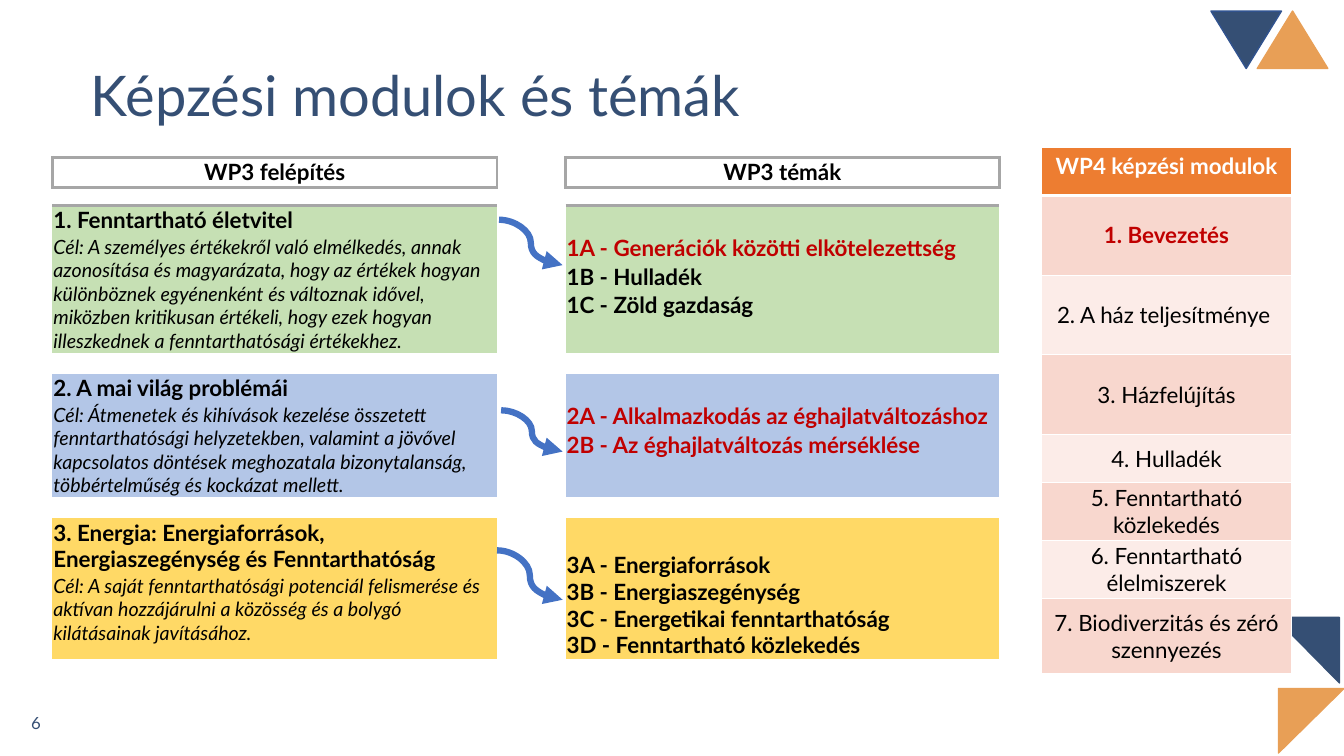
from lxml.etree import SubElement
from pptx import Presentation
from pptx.dml.color import RGBColor
from pptx.enum.shapes import MSO_CONNECTOR, MSO_SHAPE
from pptx.enum.text import MSO_ANCHOR, PP_ALIGN
from pptx.oxml import parse_xml
from pptx.oxml.ns import nsdecls, qn
from pptx.util import Inches, Pt

NAVY, ORANGE, RED, BLACK, WHITE = "354F74", "E89F56", "C00000", "000000", "FFFFFF"
GREEN, BLUE, GOLD, GRAY = "C6E0B4", "B3C6E7", "FFD966", "A6A6A6"
NO_STYLE = "{2D5ABB26-0587-4C30-8999-92F81FD0307C}"
GOALS = [
    "Cél: A személyes értékekről való elmélkedés, annak azonosítása és magyarázata, "
    "hogy az értékek hogyan különböznek egyénenként és változnak idővel, miközben "
    "kritikusan értékeli, hogy ezek hogyan illeszkednek a fenntarthatósági értékekhez.",
    "Cél: Átmenetek és kihívások kezelése összetett fenntarthatósági helyzetekben, "
    "valamint a jövővel kapcsolatos döntések meghozatala bizonytalanság, "
    "többértelműség és kockázat mellett.",
    "Cél: A saját fenntarthatósági potenciál felismerése és aktívan hozzájárulni "
    "a közösség és a bolygó kilátásainak javításához.",
]


def color(code):
    return RGBColor.from_string(code)


def box(*sizes):
    return [Inches(size) for size in sizes]


class Deck:
    """Holds the font and the slide being built."""

    font = "Lato"

    def __init__(self):
        self.prs = Presentation()
        self.prs.slide_width, self.prs.slide_height = box(13.33, 7.5)
        self.slide = self.prs.slides.add_slide(self.prs.slide_layouts[5])
        self.shapes = self.slide.shapes

    def text(self, para, words, size, ink, bold=False, italic=False, align=PP_ALIGN.LEFT):
        para.alignment = align
        run = para.add_run()
        run.text = words
        font = run.font
        font.name, font.size, font.bold, font.italic = self.font, Pt(size), bold, italic
        font.color.rgb = color(ink)

    def title(self, words):
        shape = self.shapes.title
        shape.left, shape.top, shape.width, shape.height = box(0.8, 0.25, 11.5, 1.45)
        frame = shape.text_frame
        frame.word_wrap = True
        frame.vertical_anchor = MSO_ANCHOR.MIDDLE
        frame.paragraphs[0].line_spacing = 0.9
        self.text(frame.paragraphs[0], words, 40, NAVY)

    def label(self, place, words):
        frame = self.shapes.add_textbox(*box(*place)).text_frame
        frame.word_wrap = True
        frame.vertical_anchor = MSO_ANCHOR.MIDDLE
        self.text(frame.paragraphs[0], words, 12, NAVY)

    def corner(self, place, turn, tip, fill, line):
        shape = self.shapes.add_shape(MSO_SHAPE.ISOSCELES_TRIANGLE, *box(*place))
        shape.shadow.inherit = False
        shape.rotation = turn
        shape.adjustments[0] = tip
        shape.fill.solid()
        shape.fill.fore_color.rgb = color(fill)
        shape.line.color.rgb = color(line)
        shape.line.width = Pt(1)

    def arrow(self, *ends):
        link = self.shapes.add_connector(MSO_CONNECTOR.CURVE, *box(*ends))
        link.line.color.rgb = color("4472C4")
        link.line.width = Pt(4.5)
        SubElement(link.line._get_or_add_ln(), qn("a:tailEnd"), type="triangle")
        SubElement(link._element.spPr, qn("a:effectLst"))

    def table(self, left, top, cols, rows):
        """Add a table without style, with narrow margins and small empty cells."""
        frame = self.shapes.add_table(
            len(rows), len(cols), *box(left, top, sum(cols), sum(rows)))
        table = frame.table
        table.first_row = table.horz_banding = False
        table._tbl.tblPr.find(qn("a:tableStyleId")).text = NO_STYLE
        for col, width in zip(table.columns, cols):
            col.width = Inches(width)
        for row, height in zip(table.rows, rows):
            row.height = Inches(height)
        for cell in table.iter_cells():
            cell.fill.background()
            self.inset(cell, 0.01, 0.01, 0)
            cell.text_frame.paragraphs[0]._p.get_or_add_endParaRPr().set("sz", "800")
        return table

    def inset(self, cell, side, top, base):
        cell.margin_left = cell.margin_right = Inches(side)
        cell.margin_top, cell.margin_bottom = box(top, base)

    def cell(self, cell, fill, lines, size=16, ink=BLACK, **style):
        if fill:
            cell.fill.solid()
            cell.fill.fore_color.rgb = color(fill)
        frame = cell.text_frame
        for i, line in enumerate(lines):
            para = frame.add_paragraph() if i else frame.paragraphs[0]
            self.text(para, line, size, ink, **style)

    def border(self, cell, ink, **widths):
        props = cell._tc.get_or_add_tcPr()
        for i, side in enumerate(s for s in "LRTB" if s in widths):
            props.insert(i, parse_xml(
                f'<a:ln{side} {nsdecls("a")} w="{Pt(widths[side])}"><a:solidFill>'
                f'<a:srgbClr val="{ink}"/></a:solidFill></a:ln{side}>'))


def plan(deck):
    """Draw the goals and topics of the three WP3 blocks."""
    table = deck.table(0.52, 1.56, [4.41, 0.68, 4.3], [
        0.3, 0.18, 0.28, 0.28, 0.28, 0.61, 0.21, 0.28, 0.28, 0.66, 0.21, 0.53, 0.85])
    at = table.cell
    at(3, 0).merge(at(5, 0))
    at(8, 0).merge(at(9, 0))
    at(11, 2).merge(at(12, 2))
    for col, head in (0, "WP3 felépítés"), (2, "WP3 témák"):
        deck.cell(at(0, col), None, [head], bold=True, align=PP_ALIGN.CENTER)
        deck.border(at(0, col), GRAY, L=2.25, R=2.25, T=2.25, B=2.25)
        deck.border(at(1, col), GRAY, T=2.25)
    deck.border(at(0, 1), GRAY, L=2.25, R=2.25)
    heads = [
        (2, GREEN, "1. Fenntartható életvitel"),
        (7, BLUE, "2. A mai világ problémái"),
        (11, GOLD, "3. Energia: Energiaforrások, Energiaszegénység és Fenntarthatóság"),
    ]
    for (row, fill, head), goal in zip(heads, GOALS):
        deck.cell(at(row, 0), fill, [head], bold=True)
        deck.cell(at(row + 1, 0), fill, [goal], size=14, italic=True)
    topics = [
        (2, GREEN, BLACK, []),
        (3, GREEN, RED, ["1A - Generációk közötti elkötelezettség"]),
        (4, GREEN, BLACK, ["1B - Hulladék"]),
        (5, GREEN, BLACK, ["1C - Zöld gazdaság"]),
        (7, BLUE, BLACK, []),
        (8, BLUE, RED, ["2A - Alkalmazkodás az éghajlatváltozáshoz"]),
        (9, BLUE, RED, ["2B - Az éghajlatváltozás mérséklése"]),
        (11, GOLD, BLACK, ["3A - Energiaforrások", "3B - Energiaszegénység",
                           "3C - Energetikai fenntarthatóság",
                           "3D - Fenntartható közlekedés"]),
    ]
    for row, fill, ink, lines in topics:
        deck.cell(at(row, 2), fill, lines, ink=ink, bold=True)
    at(11, 2).vertical_anchor = MSO_ANCHOR.BOTTOM


def course(deck):
    """Draw the list of WP4 modules."""
    names = ["WP4 képzési modulok", "1. Bevezetés", "2. A ház teljesítménye ",
             "3. Házfelújítás", "4. Hulladék", "5. Fenntartható közlekedés",
             "6. Fenntartható élelmiszerek", "7. Biodiverzitás és zéró szennyezés"]
    table = deck.table(10.33, 1.46, [2.48],
                       [0.48, 0.79, 0.79, 0.79, 0.48, 0.57, 0.57, 0.75])
    for row, name in enumerate(names):
        cell = table.cell(row, 0)
        fill = "F8D7CE" if row % 2 else "FCECE8"
        ink = RED if row == 1 else BLACK
        if row == 0:
            fill, ink = "ED7D31", WHITE
            deck.inset(cell, 0.1, 0.05, 0.05)
        else:
            deck.inset(cell, 0.03, 0.02, 0.02)
            cell.vertical_anchor = MSO_ANCHOR.MIDDLE
        deck.cell(cell, fill, [name], ink=ink, bold=row < 2, align=PP_ALIGN.CENTER)
        deck.border(cell, WHITE, L=1, R=1, T=3 if row == 1 else 1, B=1 if row else 3)


def main():
    deck = Deck()
    deck.title("Képzési modulok és témák")
    deck.label((0.21, 6.97, 3, 0.4), "6")
    deck.corner((12.47, 0.11, 0.7, 0.57), 0, 0.5, ORANGE, ORANGE)
    deck.corner((12.68, 6.83, 0.65, 0.64), 180, 1, ORANGE, ORANGE)
    deck.corner((12.64, 6.13, 0.65, 0.64), 270, 1, NAVY, NAVY)
    deck.corner((12.01, 0.11, 0.7, 0.57), 180, 0.5, NAVY, "31538F")
    course(deck)
    plan(deck)
    for left, top, base in (4.95, 2.18, 2.63), (4.97, 4.07, 4.48), (4.93, 5.46, 5.95):
        deck.arrow(left, top, 5.58, base)
    deck.prs.save("out.pptx")


if __name__ == "__main__":
    main()
